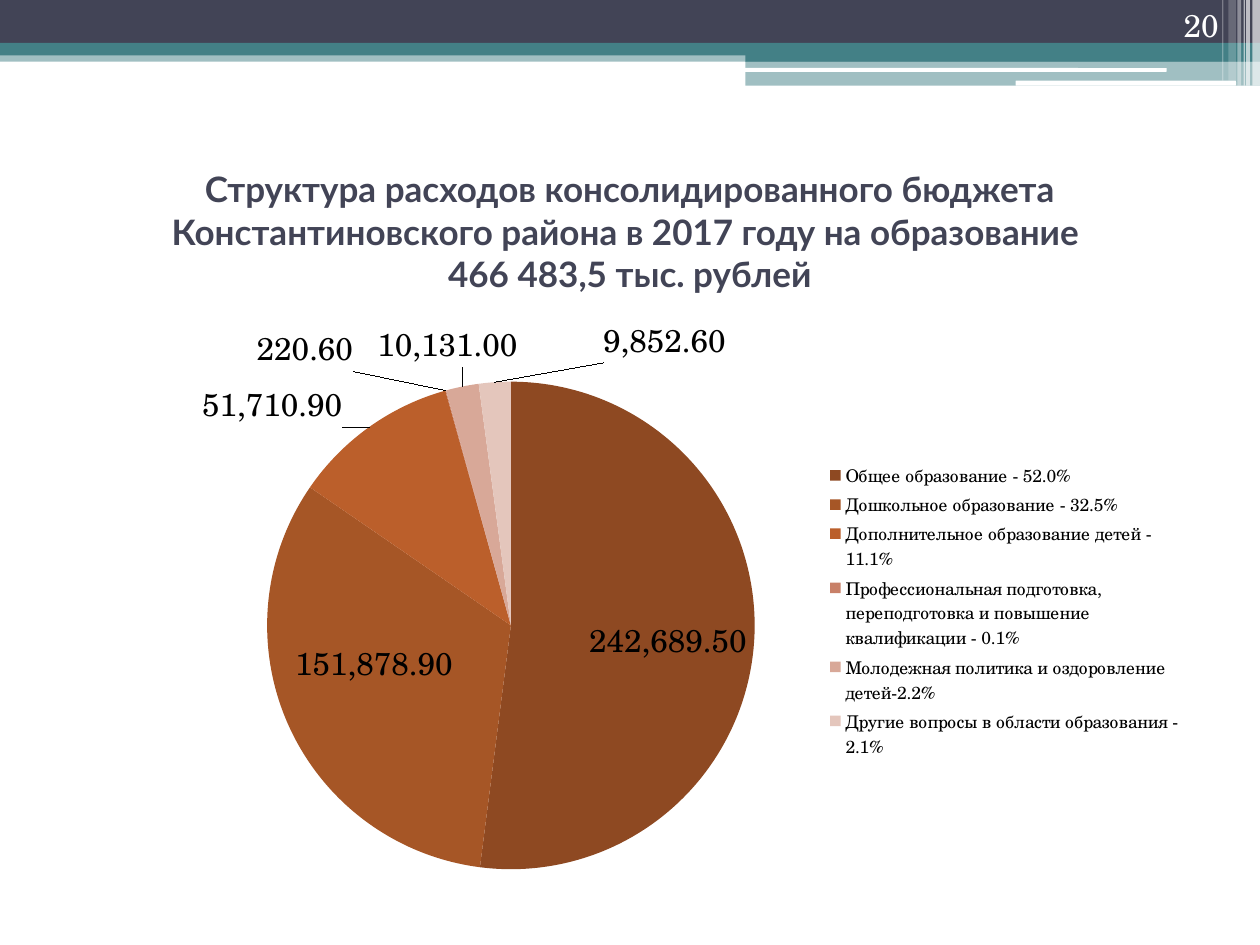
import pptx
import pptx.util
import pptx.dml.color
import pptx.chart.data
import pptx.enum.chart
import pptx.enum.shapes
import pptx.enum.text
import pptx.oxml.ns
import pptx.oxml.xmlchemy

Pt = pptx.util.Pt
SHAPE = pptx.enum.shapes.MSO_SHAPE
ALIGN = pptx.enum.text.PP_ALIGN
ANCHOR = pptx.enum.text.MSO_ANCHOR
LABEL = pptx.enum.chart.XL_LABEL_POSITION
SERIF = "TeX Gyre Schola"

BANDS = [
    (0, 28.8, 720, 6.48, "438086", 50),
    (0, 0, 720, 24.48, "424456", 100),
    (0, 24.48, 720, 7.2, "438086", 100),
    (426, 28.08, 294, 7.2, "438086", 100),
    (426, 34.92, 294, 14.04, "438086", 50),
]
RULES = [(425.5, 38.88, 241.2, 2.16), (580.3, 46.08, 126, 2.88)]
STRIPES = [
    (715.68, 4.32, 48.96, 65),
    (712.08, 2.16, 48.96, 65),
    (710.64, 0.72, 48.96, 60),
    (707.04, 2.16, 48.96, 40),
    (702, 4.32, 46.08, 20),
    (698.4, 0.72, 46.08, 30),
]
SLICES = [
    ("Общее образование - 52.0%", 242689.5, "8E4922", LABEL.INSIDE_END, 0, 0),
    ("Дошкольное образование - 32.5%", 151878.9, "A65626", LABEL.INSIDE_END, 0, -0.06),
    ("Дополнительное образование детей - 11.1%", 51710.9, "BB5F2B",
     LABEL.OUTSIDE_END, -0.02, 0.01),
    ("Профессиональная подготовка, переподготовка и повышение квалификации - 0.1%",
     220.6, "C88068", LABEL.OUTSIDE_END, -0.08, -0.02),
    ("Молодежная политика и оздоровление детей-2.2%", 10131, "D8A898",
     LABEL.OUTSIDE_END, 0.05, -0.02),
    ("Другие вопросы в области образования - 2.1%", 9852.6, "E4C6BC",
     LABEL.OUTSIDE_END, 0.15, -0.02),
]


def color(value):
    return pptx.dml.color.RGBColor.from_string(value)


def apply(target, values):
    for name, value in values.items():
        setattr(target, name, value)


def style_font(font, value, **values):
    apply(font, values)
    font.color.rgb = color(value)


def make_element(tag, value=None):
    element = pptx.oxml.xmlchemy.OxmlElement(tag)
    if value is not None:
        element.set("val", str(value))
    return element


def add_block(page, box, fill, opacity=100, kind=SHAPE.RECTANGLE):
    shape = page.shapes.add_shape(kind, *map(Pt, box))
    shape.shadow.inherit = False
    shape.line.fill.background()
    shape.fill.solid()
    shape.fill.fore_color.rgb = color(fill)
    if opacity < 100:
        tint = shape.fill._xPr.find(".//" + pptx.oxml.ns.qn("a:srgbClr"))
        tint.append(make_element("a:alpha", opacity * 1000))


def add_header(page, left, top):
    for x, y, width, height, fill, opacity in BANDS:
        add_block(page, (left + x, top + y, width, height), fill, opacity)
    for x, y, width, height in RULES:
        add_block(page, (left + x, top + y, width, height), "FFFFFF",
                  kind=SHAPE.ROUNDED_RECTANGLE)
    for x, width, height, opacity in STRIPES:
        add_block(page, (left + x, top, width, height), "FFFFFF", opacity)


def add_text(page, box, text, align, anchor, fill, **values):
    frame = page.shapes.add_textbox(*map(Pt, box)).text_frame
    apply(frame, {"word_wrap": True, "vertical_anchor": anchor})
    para = frame.paragraphs[0]
    para.text = text
    para.alignment = align
    for span in para.runs:
        style_font(span.font, fill, **values)


def set_layout(parent, position, **values):
    for old in parent.findall(pptx.oxml.ns.qn("c:layout")):
        parent.remove(old)
    layout = make_element("c:layout")
    manual = make_element("c:manualLayout")
    layout.append(manual)
    for name, value in values.items():
        manual.append(make_element("c:" + name, value))
    parent.insert(position, layout)


def add_pie(page, box):
    data = pptx.chart.data.CategoryChartData(number_format="#,##0.00")
    data.categories = [item[0] for item in SLICES]
    data.add_series("Series 1", [item[1] for item in SLICES])
    chart = page.shapes.add_chart(
        pptx.enum.chart.XL_CHART_TYPE.PIE, *map(Pt, box), data).chart
    apply(chart, {"has_title": False, "has_legend": True})
    style_font(chart.font, "000000", name=SERIF, size=Pt(18))
    legend = chart.legend
    apply(legend, {"position": pptx.enum.chart.XL_LEGEND_POSITION.RIGHT,
                   "include_in_layout": False})
    style_font(legend.font, "000000", name=SERIF, size=Pt(10))
    edges = {"xMode": "edge", "yMode": "edge"}
    set_layout(legend._element, 1, **edges, x=0.67, y=0.25, w=0.32, h=0.51)
    set_layout(chart._chartSpace.chart.plotArea, 0, layoutTarget="inner",
               **edges, x=0.18, y=0.12, w=0.43, h=0.82)

    plot = chart.plots[0]
    plot.vary_by_categories = True
    series = plot.series[0]
    apply(series.data_labels, {"show_value": True, "number_format": "#,##0.00",
                               "number_format_is_linked": False})
    for index, (_, _, fill, position, x, y) in enumerate(SLICES):
        point = series.points[index]
        point.format.fill.solid()
        point.format.fill.fore_color.rgb = color(fill)
        label = point.data_label
        style_font(label.font, "000000", name=SERIF, size=Pt(18))
        label.position = position
        set_layout(label._get_or_add_dLbl(), 1, x=x, y=y)


def main():
    deck = pptx.Presentation()
    apply(deck, {"slide_width": Pt(720), "slide_height": Pt(540)})
    page = deck.slides.add_slide(deck.slide_layouts[6])
    add_header(page, 0, 0)
    add_text(page, (36, 90, 648, 84),
             "Структура расходов консолидированного бюджета Константиновского "
             "района в 2017 году на образование \v466 483,5 тыс. рублей",
             ALIGN.CENTER, ANCHOR.MIDDLE, "424456",
             name="Lato", size=Pt(20), bold=True)
    add_pie(page, (36, 177, 648, 340.5))
    add_text(page, (643.7, 0, 59.8, 28.8), "20", ALIGN.RIGHT, ANCHOR.BOTTOM,
             "FFFFFF", name=SERIF, size=Pt(18))
    deck.save("out.pptx")


if __name__ == "__main__":
    main()
